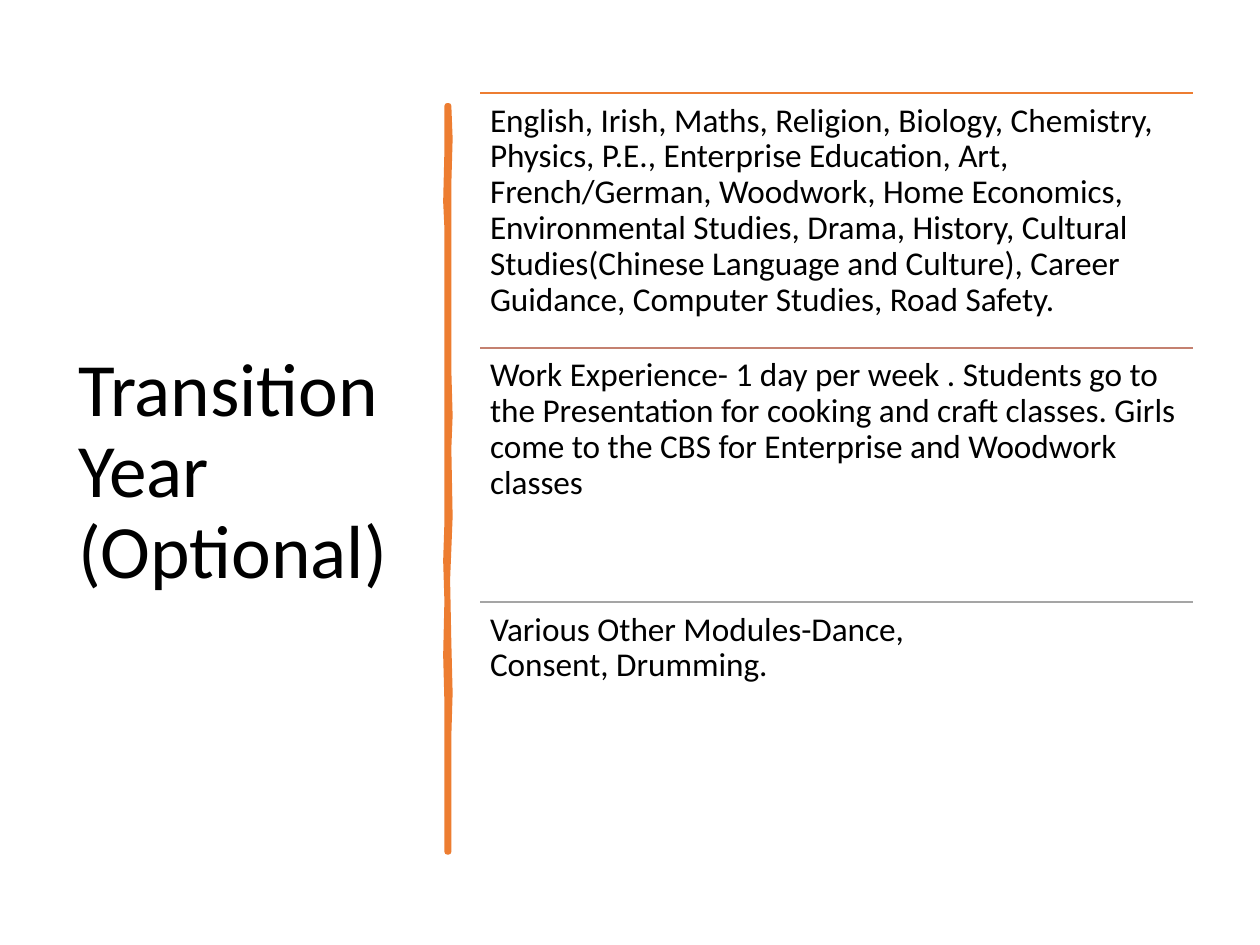
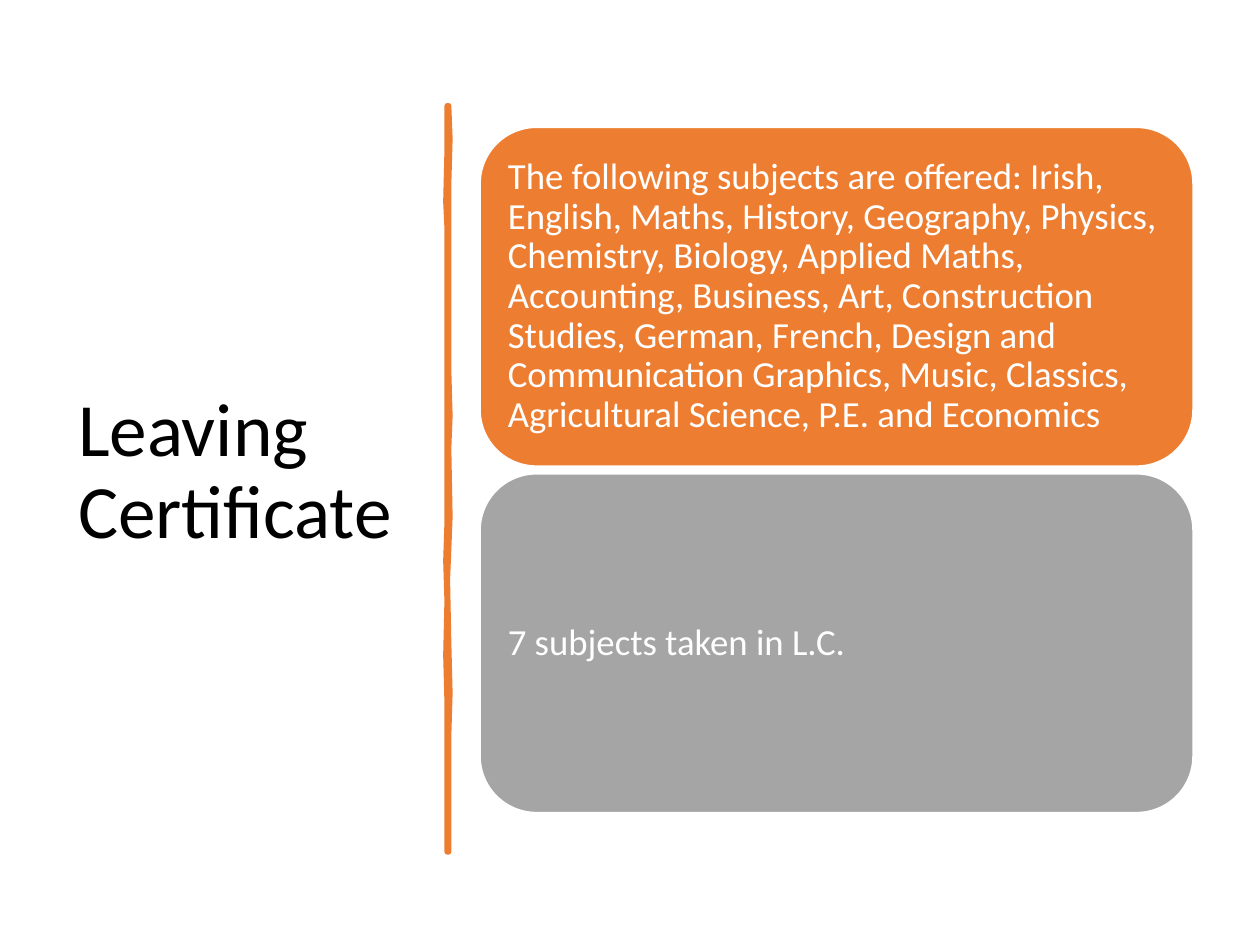
import pptx
import pptx.util
import pptx.dml.color
import pptx.enum.shapes
import pptx.enum.text
import pptx.oxml
import pptx.oxml.ns
import lxml.etree

Inches = pptx.util.Inches
Pt = pptx.util.Pt
RGBColor = pptx.dml.color.RGBColor
MSO_ANCHOR = pptx.enum.text.MSO_ANCHOR

ORANGE = RGBColor(0xED, 0x7D, 0x31)
CLAY = RGBColor(0xC4, 0x81, 0x70)
GRAY = RGBColor(0xA5, 0xA5, 0xA5)
BLACK = RGBColor(0x00, 0x00, 0x00)
WHITE = RGBColor(0xFF, 0xFF, 0xFF)
FONT = "Calibri"
NO_BREAK_SPACE = chr(160)

COLUMN_LEFT = 3.81
COLUMN_WIDTH = 5.66
ROW_TOP = 0.74
ROW_HEIGHT = 2.02
CARD_TOP = 1.01
CARD_HEIGHT = 2.69
CARD_GAP = 0.06

BRUSH_OUTLINE_HUNDREDTHS = [
    (356, 84), (357, 110), (356, 146), (356, 294), (357, 330),
    (356, 356), (357, 410), (356, 436), (355, 460), (356, 510),
    (357, 550), (356, 584), (356, 676),
    (355, 676), (355, 557), (354, 520), (355, 477), (354, 445),
    (355, 415), (355, 181), (354, 160), (355, 120), (355, 84),
]

SUBJECT_ROWS = [
    (ORANGE, "English, Irish, Maths, Religion, Biology, Chemistry, Physics, P.E., "
             "Enterprise Education, Art, French/German, Woodwork, Home Economics, "
             "Environmental Studies, Drama, History, Cultural Studies(Chinese Language "
             "and Culture), Career Guidance, Computer Studies, Road Safety."),
    (CLAY, "Work Experience- 1 day per week . Students go to the Presentation for "
           "cooking and craft classes. Girls come to the CBS for Enterprise and "
           "Woodwork classes"),
    (GRAY, f"Various Other Modules-Dance, Consent,{NO_BREAK_SPACE}Drumming."),
]

CERTIFICATE_CARDS = [
    (ORANGE, "The following subjects are offered: Irish, English, Maths, History, "
             "Geography, Physics, Chemistry, Biology, Applied Maths, Accounting, "
             "Business, Art, Construction Studies, German, French, Design and "
             "Communication Graphics, Music, Classics, Agricultural Science, P.E. "
             "and Economics"),
    (GRAY, "7 subjects taken in L.C."),
]


def write_text(shape, text, size, color, anchor, inset):
    frame = shape.text_frame
    frame.text = text
    frame.word_wrap = True
    frame.auto_size = pptx.enum.text.MSO_AUTO_SIZE.NONE
    frame.vertical_anchor = anchor
    frame.margin_left = frame.margin_right = Inches(inset)
    frame.margin_top = frame.margin_bottom = Inches(inset)
    paragraph = frame.paragraphs[0]
    paragraph.alignment = pptx.enum.text.PP_ALIGN.LEFT
    paragraph.line_spacing = 0.9
    paragraph.font.name = FONT
    paragraph.font.size = Pt(size)
    paragraph.font.color.rgb = color


def add_titled_slide(presentation, title):
    slide = presentation.slides.add_slide(presentation.slide_layouts[5])
    heading = slide.shapes.title
    heading.left, heading.top = Inches(0.52), Inches(0.7)
    heading.width, heading.height = Inches(2.8), Inches(6.11)
    write_text(heading, title, 43, BLACK, MSO_ANCHOR.MIDDLE, 0.1)

    start, *rest = BRUSH_OUTLINE_HUNDREDTHS
    builder = slide.shapes.build_freeform(*start, scale=Inches(0.01))
    builder.add_line_segments(rest, close=True)
    brush = builder.convert_to_shape()
    brush.shadow.inherit = False
    brush.fill.solid()
    brush.fill.fore_color.rgb = ORANGE
    brush.line.color.rgb = ORANGE
    brush.line.width = Pt(3.25)
    outline = brush._element.spPr.find(pptx.oxml.ns.qn("a:ln"))
    lxml.etree.SubElement(outline, pptx.oxml.ns.qn("a:round"))
    return slide


presentation = pptx.Presentation()
presentation.slide_width = Inches(10)
presentation.slide_height = Inches(7.5)

slide = add_titled_slide(presentation, "Transition Year (Optional)")
for index, (color, text) in enumerate(SUBJECT_ROWS):
    top = Inches(ROW_TOP + index * ROW_HEIGHT)
    rule = slide.shapes.add_connector(
        pptx.enum.shapes.MSO_CONNECTOR.STRAIGHT,
        Inches(COLUMN_LEFT), top, Inches(COLUMN_LEFT + COLUMN_WIDTH), top)
    rule.line.color.rgb = color
    rule.line.width = Pt(1)
    lxml.etree.SubElement(rule._element.spPr, pptx.oxml.ns.qn("a:effectLst"))
    box = slide.shapes.add_textbox(
        Inches(COLUMN_LEFT), top, Inches(COLUMN_WIDTH), Inches(ROW_HEIGHT))
    write_text(box, text, 19, BLACK, MSO_ANCHOR.TOP, 0.08)

slide = add_titled_slide(presentation, "Leaving Certificate")
for index, (color, text) in enumerate(CERTIFICATE_CARDS):
    card = slide.shapes.add_shape(
        pptx.enum.shapes.MSO_SHAPE.ROUNDED_RECTANGLE,
        Inches(COLUMN_LEFT), Inches(CARD_TOP + index * (CARD_HEIGHT + CARD_GAP)),
        Inches(COLUMN_WIDTH), Inches(CARD_HEIGHT))
    card.shadow.inherit = False
    card.fill.solid()
    card.fill.fore_color.rgb = color
    card.line.color.rgb = WHITE
    card.line.width = Pt(1)
    write_text(card, text, 21, WHITE, MSO_ANCHOR.MIDDLE, 0.09)

presentation.save("out.pptx")
